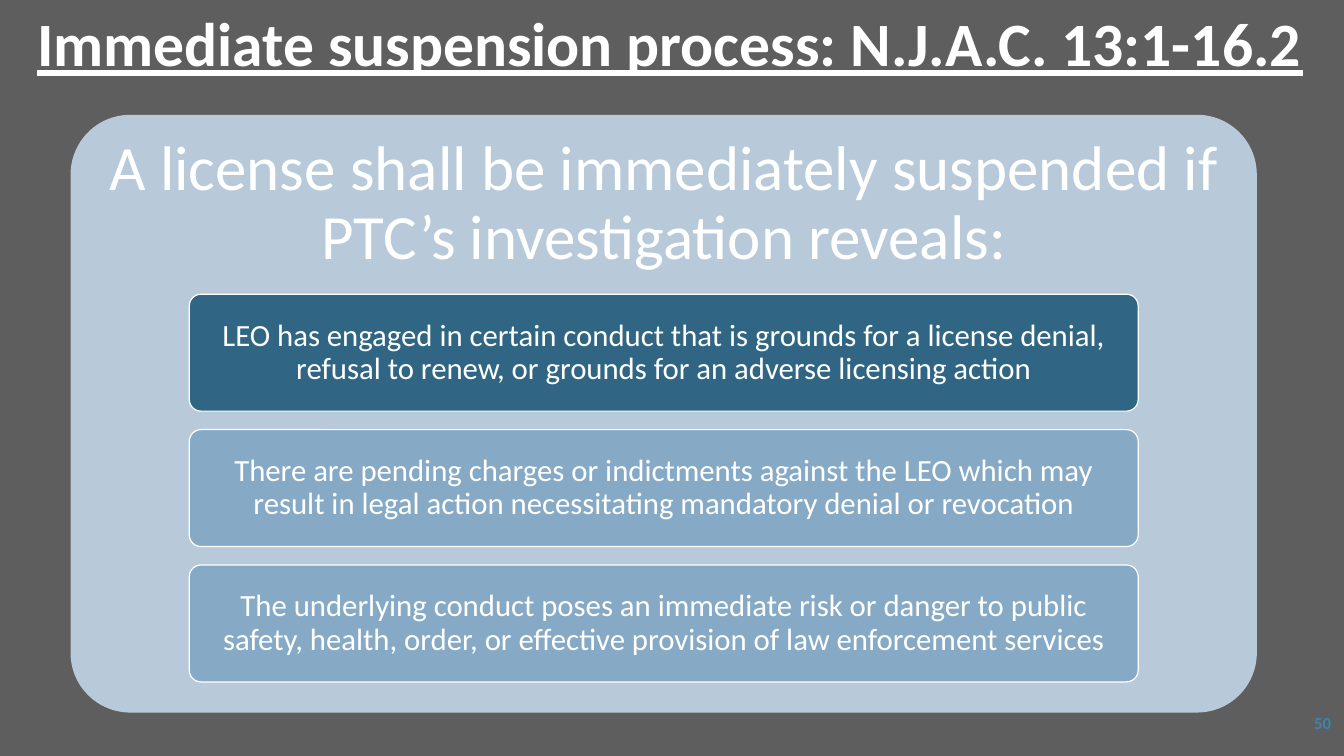
from pptx import Presentation
from pptx.dml.color import RGBColor
from pptx.enum.shapes import MSO_SHAPE
from pptx.enum.text import MSO_ANCHOR, MSO_AUTO_SIZE, PP_ALIGN
from pptx.util import Pt

WHITE = "FFFFFF"
TITLE = "Immediate suspension process: N.J.A.C. 13:1-16.2"
LEAD = "A license shall be immediately suspended if PTC’s investigation reveals:"
GROUNDS = [
    ("LEO has engaged in certain conduct that is grounds for a license denial, "
     "refusal to renew, or grounds for an adverse licensing action", "306684"),
    ("There are pending charges or indictments against the LEO which may "
     "result in legal action necessitating mandatory denial or revocation", "86AAC5"),
    ("The underlying conduct poses an immediate risk or danger to public "
     "safety, health, order, or effective provision of law enforcement services", "86AAC5"),
]


def paint(fill, color):
    """Make a fill solid in a hex colour."""
    fill.solid()
    fill.fore_color.rgb = RGBColor.from_string(color)


def write(shape, text, size, color=WHITE, bold=False, underline=False,
          align=PP_ALIGN.CENTER, spacing=1.0, inset=(7.2, 3.6)):
    """Write one formatted, vertically centred paragraph into a shape."""
    frame = shape.text_frame
    frame.word_wrap = True
    frame.auto_size = MSO_AUTO_SIZE.NONE
    frame.vertical_anchor = MSO_ANCHOR.MIDDLE
    frame.margin_left = frame.margin_right = Pt(inset[0])
    frame.margin_top = frame.margin_bottom = Pt(inset[1])
    par = frame.paragraphs[0]
    par.alignment = align
    par.line_spacing = spacing
    run = par.add_run()
    run.text = text
    font = run.font
    font.name, font.size = "Calibri", Pt(size)
    font.bold, font.underline = bold, underline
    font.color.rgb = RGBColor.from_string(color)


def label(slide, box, text, size, **style):
    """Add a text box."""
    write(slide.shapes.add_textbox(*map(Pt, box)), text, size, **style)


def panel(slide, box, color, line=None):
    """Add a rounded panel, outlined if a line colour is given."""
    shape = slide.shapes.add_shape(MSO_SHAPE.ROUNDED_RECTANGLE, *map(Pt, box))
    shape.adjustments[0] = 0.1
    shape.shadow.inherit = False
    paint(shape.fill, color)
    if line:
        paint(shape.line.fill, line)
        shape.line.width = Pt(0.85)
    else:
        shape.line.fill.background()
    return shape


def head(slide, text):
    """Place and format the slide title."""
    title = slide.shapes.title
    title.left, title.top, title.width, title.height = map(Pt, (0, 0, 957.6, 60.5))
    write(title, text, 44, bold=True, underline=True)


def main():
    """Build and save the slide."""
    deck = Presentation()
    deck.slide_width, deck.slide_height = Pt(960), Pt(540)
    slide = deck.slides.add_slide(deck.slide_layouts[5])
    paint(slide.background.fill, "5E5E5E")
    head(slide, TITLE)
    panel(slide, (50.4, 82, 847.4, 427), "B8CADA")
    label(slide, (50.4, 82, 847.4, 128.2), LEAD, 45, spacing=0.9, inset=(13.7, 13.7))
    for row, (text, color) in enumerate(GROUNDS):
        card = panel(slide, (135.2, 210.2 + row * 96.7, 677.8, 83.5), color, WHITE)
        write(card, text, 22, spacing=0.9, inset=(4.3, 3.6))
    label(slide, (914, 504, 44, 24), "50", 12, color="3F83AC", bold=True,
          align=PP_ALIGN.RIGHT)
    deck.save("out.pptx")


if __name__ == "__main__":
    main()
